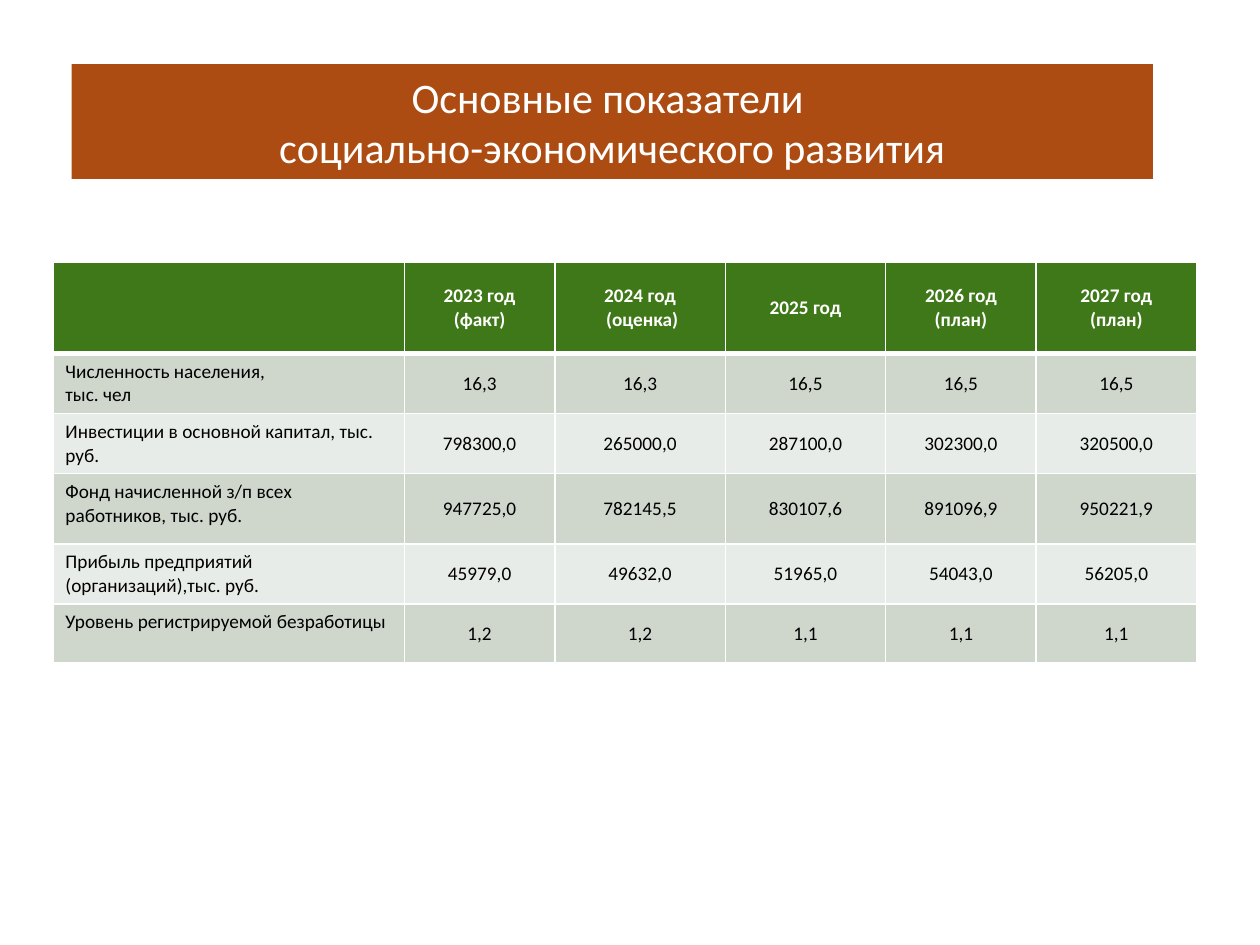
from dataclasses import dataclass

from lxml import etree
from pptx import Presentation
from pptx.dml.color import RGBColor
from pptx.enum.shapes import MSO_SHAPE
from pptx.enum.text import MSO_ANCHOR, PP_ALIGN
from pptx.oxml.ns import qn
from pptx.util import Pt

RECTANGLE = MSO_SHAPE.RECTANGLE
CENTER, LEFT = PP_ALIGN.CENTER, PP_ALIGN.LEFT
MIDDLE, TOP = MSO_ANCHOR.MIDDLE, MSO_ANCHOR.TOP


@dataclass(frozen=True)
class Theme:
    font: str = "Calibri"
    title_size: int = 24
    table_size: int = 11
    white: str = "FFFFFF"
    black: str = "000000"
    title_fill: str = "AD4C12"
    header_fill: str = "3F7818"
    band_fills: tuple = ("CFD6CC", "E8ECE8")


theme = Theme()


def style_text(text_frame, size, color, alignment, bold=False):
    for paragraph in text_frame.paragraphs:
        paragraph.alignment = alignment
        paragraph.font.name = theme.font
        paragraph.font.size = Pt(size)
        paragraph.font.bold = bold
        paragraph.font.color.rgb = RGBColor.from_string(color)


def add_borders(cell, bottom_width):
    """Draw white 1 pt cell borders, with a bottom border of its own width."""
    properties = cell._tc.get_or_add_tcPr()
    for side, width in (("L", 1), ("R", 1), ("T", 1), ("B", bottom_width)):
        line = etree.SubElement(properties, qn(f"a:ln{side}"), w=str(Pt(width)))
        fill = etree.SubElement(line, qn("a:solidFill"))
        etree.SubElement(fill, qn("a:srgbClr"), val=theme.white)


presentation = Presentation()
presentation.slide_width, presentation.slide_height = Pt(720), Pt(540)
slide = presentation.slides.add_slide(presentation.slide_layouts[6])

# Title banner
banner = slide.shapes.add_shape(RECTANGLE, Pt(41), Pt(36.7), Pt(617.8), Pt(65.5))
banner.shadow.inherit = False
banner.fill.solid()
banner.fill.fore_color.rgb = RGBColor.from_string(theme.title_fill)
banner.line.fill.background()
banner.text_frame.word_wrap = True
banner.text_frame.vertical_anchor = MIDDLE
banner.text_frame.text = "Основные показатели \vсоциально-экономического развития"
style_text(banner.text_frame, theme.title_size, theme.white, CENTER)

# Indicators table
rows = [
    ["", "2023 год\n(факт)", "2024 год\n (оценка)", "2025 год",
     "2026 год\n(план)", "2027 год\n(план)"],
    ["Численность населения,\nтыс. чел", "16,3", "16,3", "16,5", "16,5", "16,5"],
    ["Инвестиции в основной капитал, тыс. руб.",
     "798300,0", "265000,0", "287100,0", "302300,0", "320500,0"],
    ["Фонд начисленной з/п всех работников, тыс. руб.",
     "947725,0", "782145,5", "830107,6", "891096,9", "950221,9"],
    ["Прибыль предприятий (организаций),тыс. руб.",
     "45979,0", "49632,0", "51965,0", "54043,0", "56205,0"],
    ["Уровень регистрируемой безработицы", "1,2", "1,2", "1,1", "1,1", "1,1"],
]
column_widths = [200.9, 86, 97.4, 91.7, 86, 91.7]
row_heights = [51.9, 33.7, 33.7, 40.2, 33.7, 33.7]

table = slide.shapes.add_table(
    len(rows), len(column_widths), Pt(30.2), Pt(150),
    Pt(sum(column_widths)), Pt(sum(row_heights))).table
for column, width in zip(table.columns, column_widths):
    column.width = Pt(width)
for row, height in zip(table.rows, row_heights):
    row.height = Pt(height)

for row_index, values in enumerate(rows):
    is_header = row_index == 0
    fill = theme.header_fill if is_header else theme.band_fills[(row_index - 1) % 2]
    color = theme.white if is_header else theme.black
    for column_index, value in enumerate(values):
        is_label = column_index == 0
        cell = table.cell(row_index, column_index)
        add_borders(cell, 3 if is_header else 1)
        cell.fill.solid()
        cell.fill.fore_color.rgb = RGBColor.from_string(fill)
        cell.vertical_anchor = TOP if is_label else MIDDLE
        cell.text_frame.text = value
        style_text(cell.text_frame, theme.table_size, color,
                   LEFT if is_label else CENTER, bold=is_header)

presentation.save("out.pptx")
